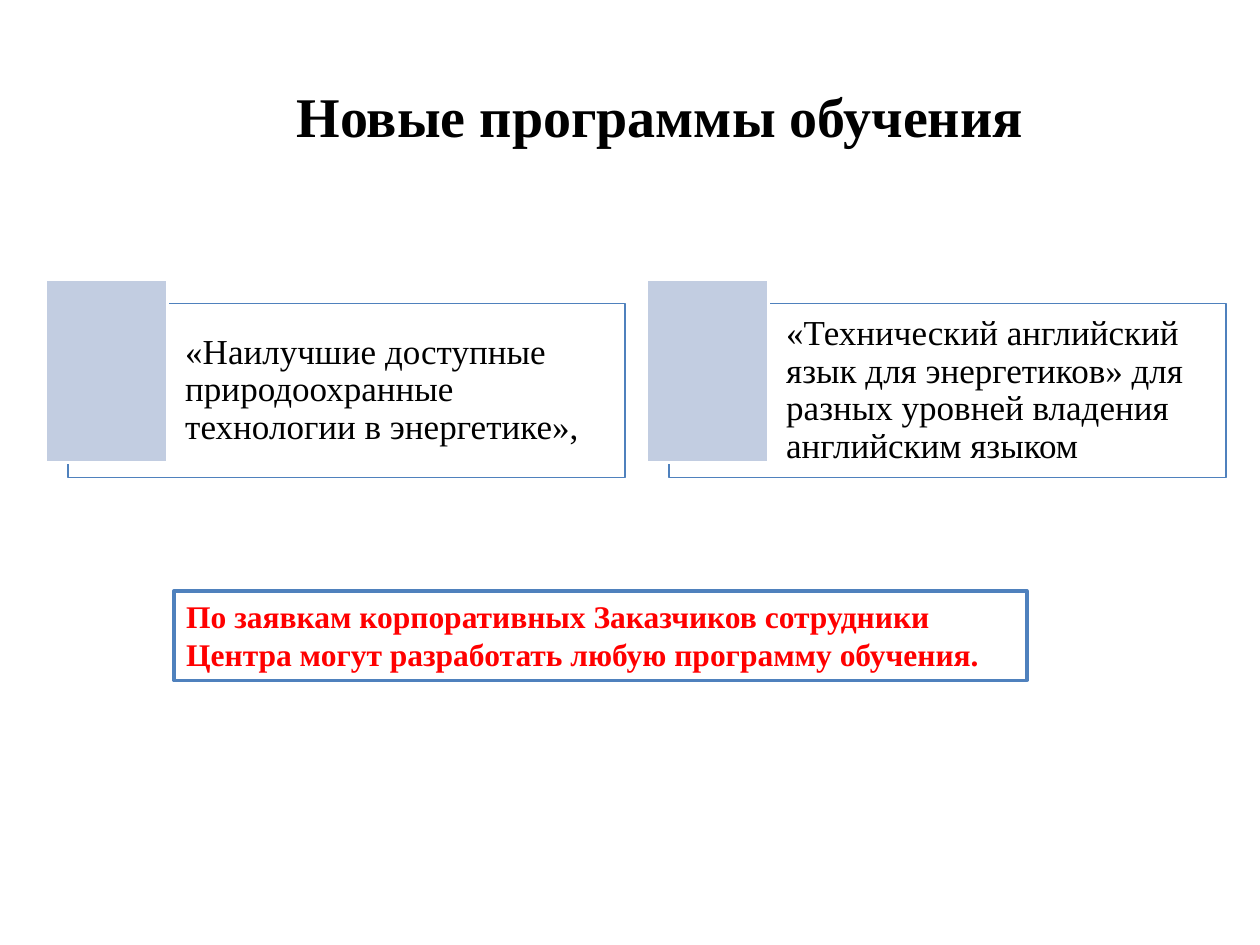
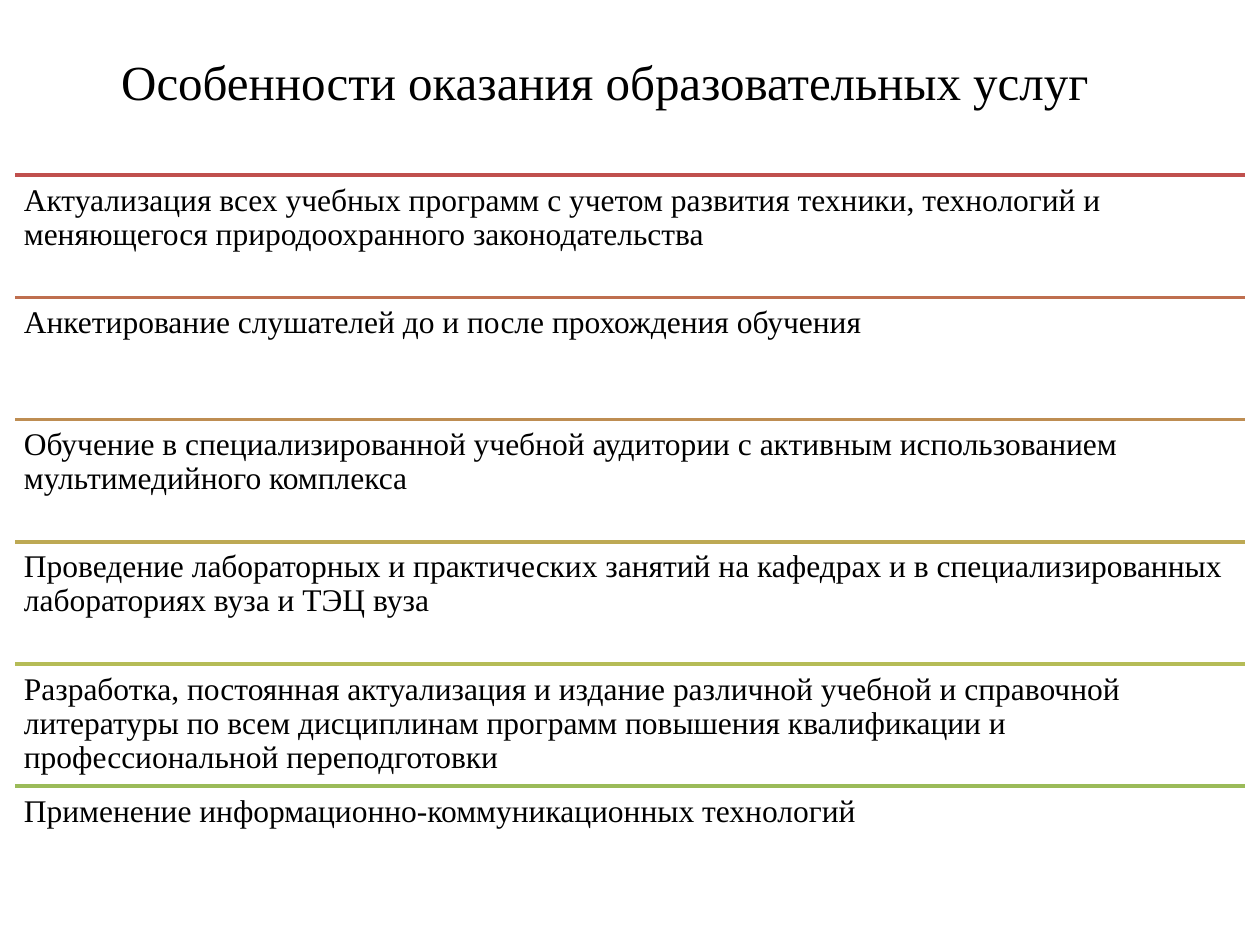
"""Build two slides on new training programmes and how the courses are run."""
import pptx
import pptx.util
import pptx.dml.color
import pptx.enum.shapes
import pptx.enum.text
import pptx.oxml.ns
import lxml.etree

COLORS = {"text": "000000", "paper": "FFFFFF", "frame": "4F81BD",
          "tab": "C2CDE1", "accent": "FF0000"}
FONT = "Times New Roman"
WIDTH, HEIGHT = 10, 7.5

PROGRAMS_TITLE = "Новые программы обучения"
PROGRAMS = [
    "«Наилучшие доступные природоохранные технологии в энергетике»,",
    "«Технический английский язык для энергетиков» для разных уровней "
    "владения английским языком",
]
OFFER = ("По заявкам корпоративных Заказчиков сотрудники Центра могут "
         "разработать любую программу обучения.")

FEATURES_TITLE = "Особенности оказания образовательных услуг"
FEATURES = [
    ("C0504D", "Актуализация всех учебных программ с учетом развития техники, "
               "технологий и меняющегося природоохранного законодательства"),
    ("BF6F4F", "Анкетирование слушателей до и после прохождения обучения"),
    ("BE8D52", "Обучение в специализированной учебной аудитории с активным "
               "использованием мультимедийного комплекса"),
    ("BDA954", "Проведение лабораторных и практических занятий на кафедрах и "
               "в специализированных лабораториях вуза и ТЭЦ вуза"),
    ("B5BC57", "Разработка, постоянная актуализация и издание различной учебной "
               "и справочной литературы по всем дисциплинам программ повышения "
               "квалификации и профессиональной переподготовки"),
    ("9BBB59", "Применение информационно-коммуникационных технологий"),
]

ALIGN = pptx.enum.text.PP_ALIGN
ANCHOR = pptx.enum.text.MSO_ANCHOR


def rgb(color):
    return pptx.dml.color.RGBColor.from_string(color)


def inches(*lengths):
    return [pptx.util.Inches(length) for length in lengths]


def write(part, text, size, color=COLORS["text"], bold=False, align=ALIGN.LEFT,
          anchor=ANCHOR.TOP, margins=(0.1, 0.05, 0.1, 0.05), spacing=1):
    frame = part.text_frame
    frame.word_wrap = True
    frame.auto_size = pptx.enum.text.MSO_AUTO_SIZE.NONE
    frame.vertical_anchor = anchor
    (frame.margin_left, frame.margin_top,
     frame.margin_right, frame.margin_bottom) = inches(*margins)
    paragraph = frame.paragraphs[0]
    paragraph.alignment = align
    paragraph.line_spacing = spacing
    run = paragraph.add_run()
    run.text = text
    run.font.name = FONT
    run.font.size = pptx.util.Pt(size)
    run.font.bold = bold
    run.font.color.rgb = rgb(color)


def add_titled_slide(deck, title, box, size, bold=False):
    slide = deck.slides.add_slide(deck.slide_layouts[5])
    heading = slide.shapes.title
    heading.left, heading.top, heading.width, heading.height = inches(*box)
    write(heading, title, size, bold=bold, align=ALIGN.CENTER, anchor=ANCHOR.MIDDLE)
    return slide


def add_box(slide, box, fill, line, line_width):
    rect = slide.shapes.add_shape(
        pptx.enum.shapes.MSO_SHAPE.RECTANGLE, *inches(*box))
    rect.shadow.inherit = False
    rect.fill.solid()
    rect.fill.fore_color.rgb = rgb(fill)
    rect.line.color.rgb = rgb(line)
    rect.line.width = pptx.util.Pt(line_width)
    return rect


def add_rule(slide, left, right, y, color):
    rule = slide.shapes.add_connector(
        pptx.enum.shapes.MSO_CONNECTOR.STRAIGHT, *inches(left, y, right, y))
    rule.line.color.rgb = rgb(color)
    rule.line.width = pptx.util.Pt(2)
    lxml.etree.SubElement(rule._element.spPr, pptx.oxml.ns.qn("a:effectLst"))


def build_programs(deck):
    slide = add_titled_slide(deck, PROGRAMS_TITLE, (0.59, 0.29, 9.3, 1.25), 32, bold=True)
    left, top, pitch = 0.54, 2.41, 4.77
    for column, program in enumerate(PROGRAMS):
        x = left + column * pitch
        card = add_box(slide, (x, top, 4.42, 1.38), COLORS["paper"], COLORS["frame"], 0.75)
        write(card, program, 20, anchor=ANCHOR.MIDDLE,
              margins=(0.93, 0.08, 0.08, 0.08), spacing=0.9)
        add_box(slide, (x - 0.18, top - 0.19, 0.97, 1.45), COLORS["tab"], COLORS["paper"], 2)
    offer = add_box(slide, (1.38, 4.69, 6.77, 0.71), COLORS["paper"], COLORS["frame"], 2)
    write(offer, OFFER, 18, color=COLORS["accent"], bold=True)


def build_features(deck):
    slide = add_titled_slide(deck, FEATURES_TITLE, (0.51, 0.36, 8.58, 0.57), 28)
    margin, top, row_height = 0.12, 1.39, 0.97
    for row, (color, feature) in enumerate(FEATURES):
        y = top + row * row_height
        add_rule(slide, margin, WIDTH - margin, y, color)
        label = slide.shapes.add_textbox(
            *inches(margin, y, WIDTH - 2 * margin, row_height))
        write(label, feature, 18, margins=(0.07,) * 4, spacing=0.9)


def main():
    deck = pptx.Presentation()
    deck.slide_width, deck.slide_height = inches(WIDTH, HEIGHT)
    build_programs(deck)
    build_features(deck)
    deck.save("out.pptx")


if __name__ == "__main__":
    main()
